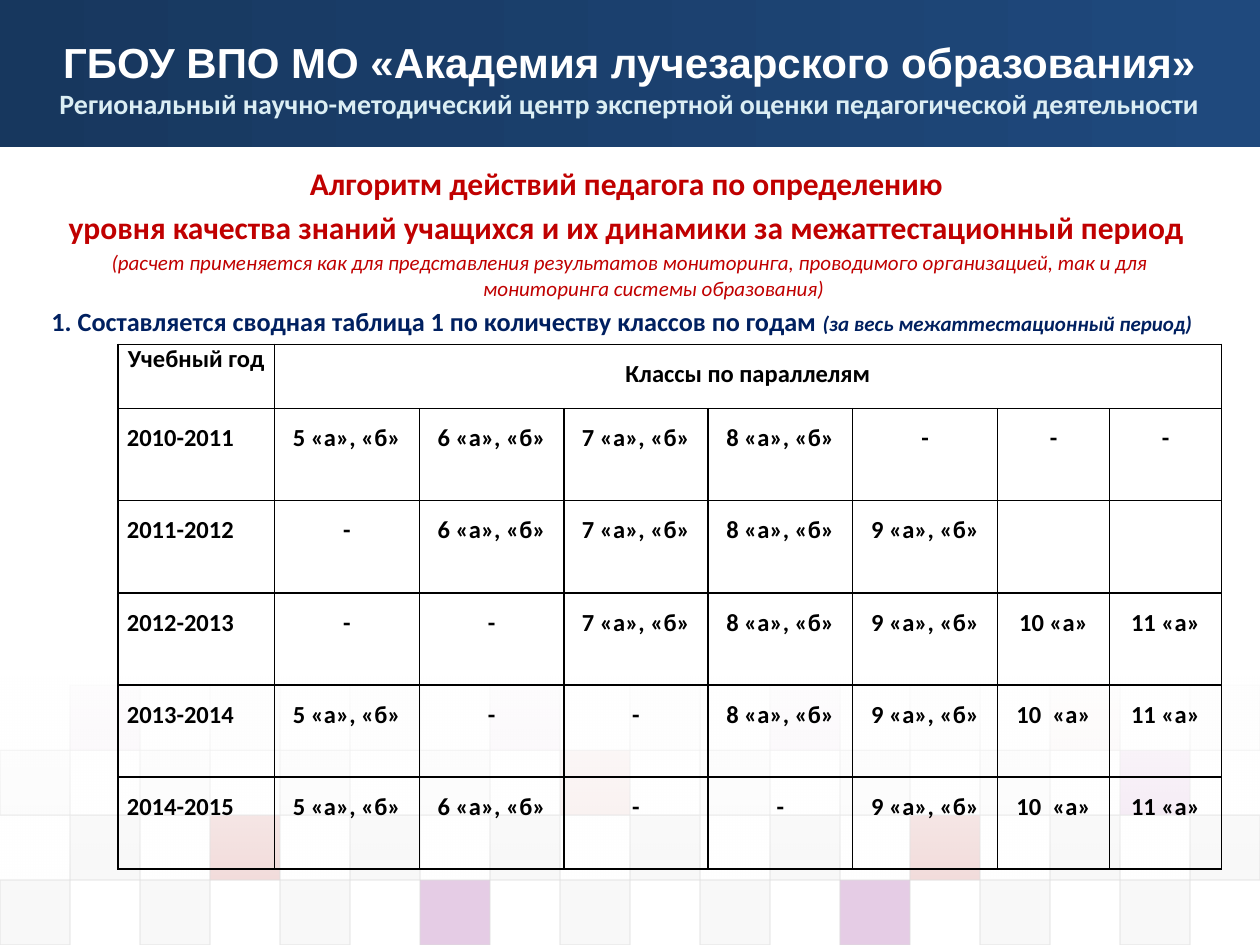
from lxml.etree import SubElement
from pptx import Presentation
from pptx.dml.color import RGBColor
from pptx.enum.shapes import MSO_SHAPE
from pptx.enum.text import PP_ALIGN
from pptx.oxml.ns import qn
from pptx.util import Pt

TILE_COLORS = {"D": "DDDDDD", "E": "EAEAEA", "P": "800080", "R": "C0504D"}
TILE_ROWS = [("PEEPDPERE", 5), ("DDDDRDDDP", 10), ("DRDDDDRDD", 20), ("DDDPDDPDD", 20)]
COLUMN_WIDTHS = [89.3, 82.8, 82.8, 82.1, 82.8, 82.8, 64, 64]
CLASS_ROWS = [
    ["2010-2011", "5 «а», «б»", "6 «а», «б»", "7 «а», «б»", "8 «а», «б»", "-", "-", "-"],
    ["2011-2012", "-", "6 «а», «б»", "7 «а», «б»", "8 «а», «б»", "9 «а», «б»", "", ""],
    ["2012-2013", "-", "-", "7 «а», «б»", "8 «а», «б»", "9 «а», «б»", "10 «а»", "11 «а»"],
    ["2013-2014", "5 «а», «б»", "-", "-", "8 «а», «б»", "9 «а», «б»", "10  «а»", "11 «а»"],
    ["2014-2015", "5 «а», «б»", "6 «а», «б»", "-", "-", "9 «а», «б»", "10  «а»", "11 «а»"],
]


def color(value):
    """Turn a hex string into a colour."""
    return RGBColor.from_string(value)


def set_opacity(shape, *percents):
    """Give the shape's colours, in order of fill then line, their opacity."""
    for element, percent in zip(shape._element.spPr.iter(qn("a:srgbClr")), percents):
        SubElement(element, qn("a:alpha"), val=str(percent * 1000))


def add_box(slide, left, top, width, height):
    """Add a rectangle without shadow or line."""
    box = slide.shapes.add_shape(
        MSO_SHAPE.RECTANGLE, Pt(left), Pt(top), Pt(width), Pt(height))
    box.shadow.inherit = False
    box.line.fill.background()
    return box


def add_gradient(slide, left, top, width, height, colors, angle):
    """Add a rectangle with a two-colour gradient."""
    box = add_box(slide, left, top, width, height)
    box.fill.gradient()
    box.fill.gradient_angle = angle
    for stop, value in zip(box.fill.gradient_stops, colors):
        stop.color.rgb = color(value)
    return box


def style(span, size, value, bold=True, italic=False, font="Calibri"):
    """Format one run of text."""
    span.font.size = Pt(size)
    span.font.name = font
    span.font.bold = bold
    span.font.italic = italic
    span.font.color.rgb = color(value)


def add_text_box(slide, left, top, width, height):
    """Add a wrapping text box and return its frame."""
    frame = slide.shapes.add_textbox(Pt(left), Pt(top), Pt(width), Pt(height)).text_frame
    frame.word_wrap = True
    return frame


def add_tiles(slide, left, top, width, height):
    """Draw the checkered tiles that fade out towards the top."""
    tile_width, tile_height = width / 18, height / len(TILE_ROWS)
    for row, (codes, opacity) in enumerate(TILE_ROWS):
        for index, code in enumerate(codes):
            column = 2 * index + (row + 1) % 2
            tile = add_box(slide, left + column * tile_width, top + row * tile_height,
                           tile_width, tile_height)
            tile.fill.solid()
            tile.fill.fore_color.rgb = color(TILE_COLORS[code])
            tile.line.color.rgb = color("DDDDDD")
            tile.line.width = Pt(0.75)
            set_opacity(tile, opacity, 60)
    fade = add_gradient(slide, left, top - 5, width, 116.6, ["FFFFFF", "FFFFFF"], 270)
    set_opacity(fade, 90, 0)


def add_header(slide, left, top, width, height):
    """Draw the banner with the institution and its centre."""
    add_gradient(slide, left, top, width, height, ["17375E", "1F497D"], 0)
    frame = add_text_box(slide, left + 0.7, top + 15, width - 2, 62.6)
    frame.margin_top = Pt(5.6)
    frame.text = ("ГБОУ ВПО МО «Академия лучезарского образования»\n"
                  "Региональный научно-методический центр экспертной оценки "
                  "педагогической деятельности")
    title, subtitle = frame.paragraphs
    title.alignment = subtitle.alignment = PP_ALIGN.CENTER
    style(title.runs[0], 24, "FFFFFF", font="Arial")
    style(subtitle.runs[0], 16, "DBEEF4")


def add_intro(slide, left, top, width, height):
    """Write the heading, its remark and the first step."""
    frame = add_text_box(slide, left, top, width, height)
    frame.text = ("Алгоритм действий педагога по определению \n"
                  "уровня качества знаний учащихся и их динамики за межаттестационный период \n"
                  "(расчет применяется как для представления результатов мониторинга, "
                  "проводимого организацией, так и для мониторинга системы образования)\n"
                  "1. Составляется сводная таблица 1 по количеству классов по годам ")
    for para, size in zip(frame.paragraphs, [18, 18, 12, 15]):
        para.alignment = PP_ALIGN.CENTER
        para.space_before = Pt(size * 0.2)
        para._p.get_or_add_pPr().set("marL", str(Pt(27)))
        para._p.get_or_add_pPr().set("indent", str(-Pt(27)))
        style(para.runs[0], size, "C00000", bold=size != 12, italic=size == 12)
    step = frame.paragraphs[-1]
    step.alignment = PP_ALIGN.LEFT
    style(step.runs[0], 15, "002060")
    remark = step.add_run()
    remark.text = "(за весь межаттестационный период)"
    style(remark, 12, "002060", italic=True)


def add_borders(cell):
    """Draw thin black lines on all sides of a cell."""
    for side in ("a:lnL", "a:lnR", "a:lnT", "a:lnB"):
        line = SubElement(cell._tc.get_or_add_tcPr(), qn(side), w=str(Pt(1)))
        fill = SubElement(line, qn("a:solidFill"))
        SubElement(fill, qn("a:srgbClr"), val="000000")


def fill_cell(cell, text, alignment, before, after, spacing):
    """Write and format the text of one cell."""
    cell.text = text
    para = cell.text_frame.paragraphs[0]
    para.alignment = alignment
    para.space_before, para.space_after = Pt(before), Pt(after)
    para.line_spacing = spacing
    for span in para.runs:
        style(span, 14, "000000")


def add_class_table(slide, left, top, width, height):
    """Build the table of classes by school year."""
    header_height = 36.7
    table = slide.shapes.add_table(len(CLASS_ROWS) + 1, len(COLUMN_WIDTHS), Pt(left),
                                   Pt(top), Pt(width), Pt(height)).table
    table.first_row = table.horz_banding = False
    for column, column_width in zip(table.columns, COLUMN_WIDTHS):
        column.width = Pt(column_width)
    for index, row in enumerate(table.rows):
        row.height = Pt((height - header_height) / len(CLASS_ROWS) if index else header_height)
    for cell in table.iter_cells():
        add_borders(cell)
        cell.fill.background()
        cell.margin_left = cell.margin_right = Pt(5)
        cell.margin_top = cell.margin_bottom = Pt(0)
    table.cell(0, 1).merge(table.cell(0, len(COLUMN_WIDTHS) - 1))
    fill_cell(table.cell(0, 0), "Учебный год", PP_ALIGN.CENTER, 6, 6, 1.0)
    fill_cell(table.cell(0, 1), "Классы по параллелям", PP_ALIGN.CENTER, 6, 0, 1.5)
    for row, texts in enumerate(CLASS_ROWS, 1):
        for column, text in enumerate(texts):
            alignment = PP_ALIGN.CENTER if column else PP_ALIGN.JUSTIFY
            gap = 0 if text == "10  «а»" else 3
            fill_cell(table.cell(row, column), text, alignment, gap, gap, 1.5)


def main():
    """Build and save the slide."""
    deck = Presentation()
    deck.slide_width, deck.slide_height = Pt(720), Pt(540)
    slide = deck.slides.add_slide(deck.slide_layouts[6])
    add_tiles(slide, 0, 391.6, 720, 148.4)
    add_header(slide, 0, 0, 720, 84.2)
    add_intro(slide, 22.3, 90, 675.4, 101.5)
    add_class_table(slide, 67.5, 196.8, sum(COLUMN_WIDTHS), 300)
    deck.save("out.pptx")


if __name__ == "__main__":
    main()
